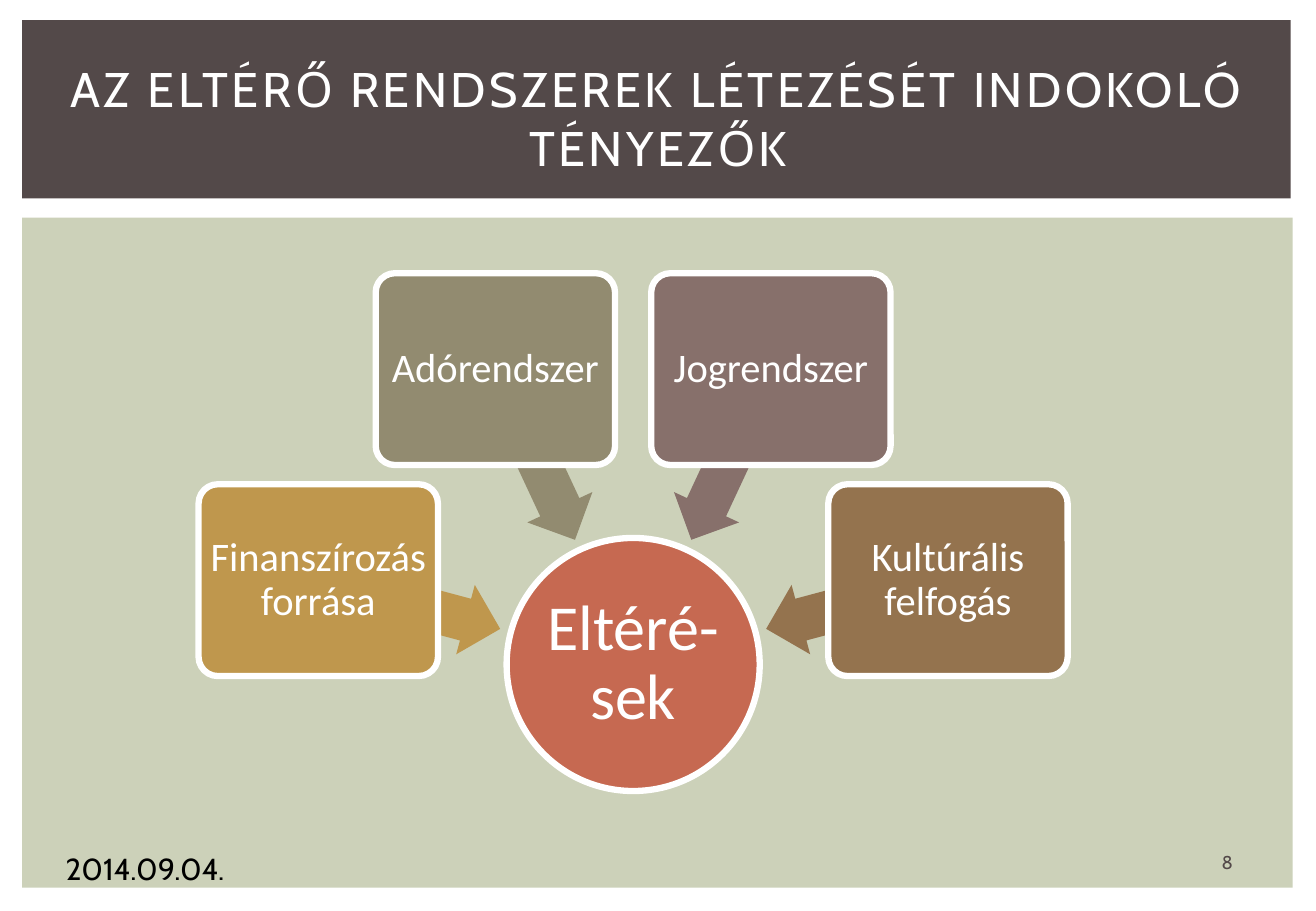
from dataclasses import dataclass
from math import cos, radians, sin

from pptx import Presentation
from pptx import util as u
from pptx.dml.color import RGBColor
from pptx.enum import shapes, text

COLUMNS, ROWS = 130, 90
CELL = u.Inches(1 / 12)

WHITE = RGBColor(0xFF, 0xFF, 0xFF)
BLACK = RGBColor(0x00, 0x00, 0x00)
SAGE = RGBColor(0xCC, 0xD1, 0xB9)
UMBER = RGBColor(0x53, 0x49, 0x49)
CORAL = RGBColor(0xC6, 0x69, 0x51)
GOLD = RGBColor(0xBF, 0x97, 0x4D)
OLIVE = RGBColor(0x92, 0x8B, 0x70)
MAUVE = RGBColor(0x87, 0x70, 0x6B)
BROWN = RGBColor(0x94, 0x73, 0x4E)

HUB_COLUMN, HUB_ROW, HUB_SIZE = 62.55, 65.65, 25
BOX_RADIUS, BOX_WIDTH, BOX_HEIGHT = 32.2, 23.65, 18.95
ARROW_RADIUS, ARROW_WIDTH, ARROW_HEIGHT = 22.9, 18.6, 7.1


@dataclass(frozen=True)
class Frame:
    column: float
    row: float
    columns: float
    rows: float

    def lengths(self) -> list[int]:
        return [round(cells * CELL) for cells in
                (self.column, self.row, self.columns, self.rows)]


@dataclass(frozen=True)
class Style:
    font: str
    size: float
    colour: RGBColor
    align: text.PP_ALIGN = text.PP_ALIGN.CENTER
    anchor: text.MSO_ANCHOR = text.MSO_ANCHOR.MIDDLE
    line_spacing: float = 1.0
    tracking: int = 0


@dataclass(frozen=True)
class Label:
    words: str
    frame: Frame
    style: Style


@dataclass(frozen=True)
class Factor:
    words: str
    angle: float
    colour: RGBColor


LABELS = [
    Label("2014.09.04.", Frame(5.3, 83.4, 30.4, 3.6),
          Style("Cabin", 18, BLACK, text.PP_ALIGN.LEFT, text.MSO_ANCHOR.TOP)),
    Label("8", Frame(117.1, 83.4, 8.3, 3.6), Style("Cabin", 11, UMBER)),
    Label("AZ ELTÉRŐ RENDSZEREK LÉTEZÉSÉT INDOKOLÓ TÉNYEZŐK",
          Frame(5.4, 4.7, 119.2, 13.8),
          Style("Cabin", 28.8, WHITE, tracking=200)),
]

FACTORS = [
    Factor("Finanszírozás forrása", 195, GOLD),
    Factor("Adórendszer", 245, OLIVE),
    Factor("Jogrendszer", 295, MAUVE),
    Factor("Kultúrális felfogás", 345, BROWN),
]

HUB_STYLE = Style("Calibri", 38, WHITE, line_spacing=0.9)
FACTOR_STYLE = Style("Calibri", 24, WHITE, line_spacing=0.9)


def around_hub(angle: float, radius: float, columns: float, rows: float) -> Frame:
    column = HUB_COLUMN + radius * cos(radians(angle))
    row = HUB_ROW + radius * sin(radians(angle))
    return Frame(column - columns / 2, row - rows / 2, columns, rows)


def write(box, words: str, style: Style) -> None:
    frame = box.text_frame
    frame.word_wrap = True
    frame.vertical_anchor = style.anchor
    para = frame.paragraphs[0]
    para.alignment = style.align
    para.line_spacing = style.line_spacing
    span = para.add_run()
    span.text = words
    span.font.name = style.font
    span.font.size = u.Pt(style.size)
    span.font.color.rgb = style.colour
    if style.tracking:
        span.font._element.set("spc", str(style.tracking))


def add_label(page, label: Label) -> None:
    write(page.shapes.add_textbox(*label.frame.lengths()), label.words, label.style)


def add_block(page, kind: shapes.MSO_SHAPE, frame: Frame, colour: RGBColor):
    block = page.shapes.add_shape(kind, *frame.lengths())
    block.shadow.inherit = False
    block.fill.solid()
    block.fill.fore_color.rgb = colour
    block.line.fill.background()
    return block


def add_node(page, kind: shapes.MSO_SHAPE, frame: Frame, colour: RGBColor,
             words: str, style: Style):
    node = add_block(page, kind, frame, colour)
    node.line.color.rgb = WHITE
    node.line.width = u.Pt(3.75)
    inner = node.text_frame
    inner.margin_left = inner.margin_right = 0
    inner.margin_top = inner.margin_bottom = 0
    write(node, words, style)
    return node


def add_factor(page, factor: Factor) -> None:
    arrow = add_block(page, shapes.MSO_SHAPE.LEFT_ARROW,
                      around_hub(factor.angle, ARROW_RADIUS, ARROW_WIDTH, ARROW_HEIGHT),
                      factor.colour)
    arrow.rotation = factor.angle
    arrow.adjustments[0] = 0.6
    arrow.adjustments[1] = 0.5
    box = add_node(page, shapes.MSO_SHAPE.ROUNDED_RECTANGLE,
                   around_hub(factor.angle, BOX_RADIUS, BOX_WIDTH, BOX_HEIGHT),
                   factor.colour, factor.words, FACTOR_STYLE)
    box.adjustments[0] = 0.1


def main() -> None:
    deck = Presentation()
    deck.slide_width = COLUMNS * CELL
    deck.slide_height = ROWS * CELL
    page = deck.slides.add_slide(deck.slide_layouts[6])

    add_block(page, shapes.MSO_SHAPE.RECTANGLE, Frame(2.2, 21.5, 125.5, 66.2), SAGE)
    add_block(page, shapes.MSO_SHAPE.RECTANGLE, Frame(2.2, 2, 125.3, 17.6), UMBER)
    for label in LABELS:
        add_label(page, label)

    add_node(page, shapes.MSO_SHAPE.OVAL, around_hub(0, 0, HUB_SIZE, HUB_SIZE),
             CORAL, "Eltéré-sek", HUB_STYLE)
    for factor in FACTORS:
        add_factor(page, factor)

    deck.save("out.pptx")


if __name__ == "__main__":
    main()
